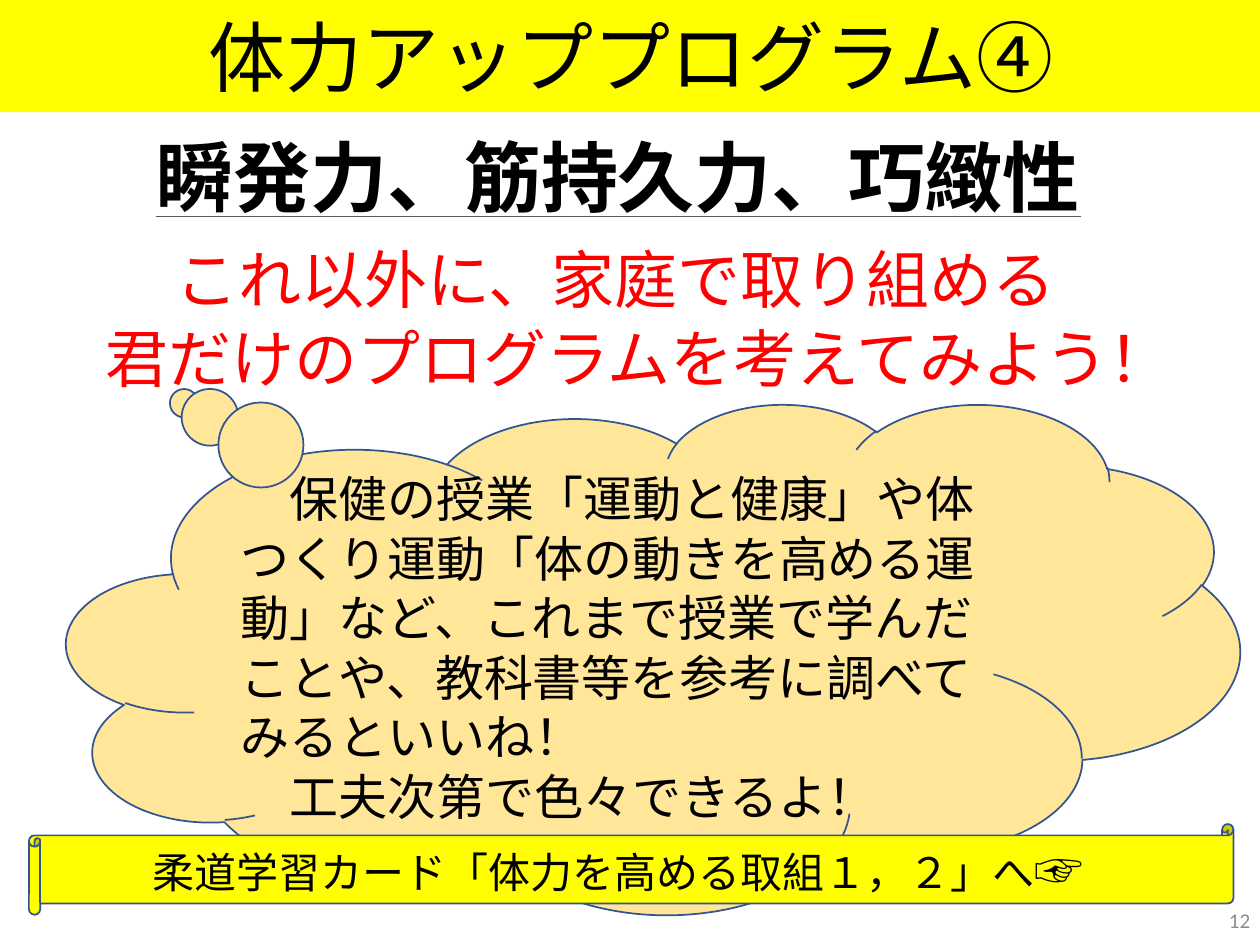
"""Build the fitness programme slide with its thought cloud and scroll banner."""
from dataclasses import dataclass

from pptx import Presentation
from pptx.dml.color import RGBColor
from pptx.enum.shapes import MSO_SHAPE as Preset
from pptx.enum.text import MSO_ANCHOR as Anchor, PP_ALIGN as Align
from pptx.oxml.ns import qn
from pptx.util import Inches, Pt


@dataclass(frozen=True)
class Theme:
    japanese: str = "Noto Sans CJK JP"
    latin: str = "Calibri"
    black: str = "000000"
    white: str = "FFFFFF"
    yellow: str = "FFFF00"
    cream: str = "FFE699"
    red: str = "FF0000"
    gray: str = "8C8C8C"
    outline: str = "325491"
    heading: int = 44
    indent: int = 40
    appeal: int = 36
    body: int = 28
    banner: int = 24
    spacer: int = 18
    number: int = 12


theme = Theme()


def add_panel(preset, place, fill, line=None):
    panel = page.shapes.add_shape(preset, *map(Inches, place))
    panel.shadow.inherit = False
    panel.fill.solid()
    panel.fill.fore_color.rgb = RGBColor.from_string(fill)
    if line:
        panel.line.color.rgb = RGBColor.from_string(line)
        panel.line.width = Pt(1)
    else:
        panel.line.fill.background()
    return panel


def write(box, paragraphs, color, align=Align.LEFT, spacing=None, bold=False):
    frame = box.text_frame
    frame.word_wrap = True
    frame.vertical_anchor = Anchor.MIDDLE
    for index, runs in enumerate(paragraphs):
        para = frame.add_paragraph() if index else frame.paragraphs[0]
        para.alignment = align
        if spacing:
            para.line_spacing = Pt(spacing)
        for text, size, face in runs:
            span = para.add_run()
            span.text = text
            span.font.size = Pt(size)
            span.font.name = face
            span.font.bold = bold
            span.font.underline = bold
            span.font.color.rgb = RGBColor.from_string(color)
            east_asian = span.font._element.makeelement(qn("a:ea"), {"typeface": face})
            span.font._element.append(east_asian)


deck = Presentation()
deck.slide_width, deck.slide_height = Inches(10), Inches(7.5)
page = deck.slides.add_slide(deck.slide_layouts[6])

title = add_panel(Preset.RECTANGLE, (0, 0, 10.02, 0.89), theme.yellow)
write(title, [[("体力アッププログラム④", theme.heading, theme.japanese)]],
      theme.black, Align.CENTER)

abilities = add_panel(Preset.RECTANGLE, (1.14, 0.96, 8.69, 0.87), theme.white)
write(abilities, [[("瞬発力、筋持久力、巧緻性", theme.heading, theme.japanese)]],
      theme.black, bold=True)

number = page.shapes.add_textbox(Inches(7.77), Inches(7.1), Inches(2.25), Inches(0.4))
write(number, [[("12", theme.number, theme.latin)]], theme.gray, Align.RIGHT)

appeal = add_panel(Preset.RECTANGLE, (0.74, 1.72, 9.09, 1.6), theme.white)
write(appeal, [
    [("　", theme.indent, theme.japanese),
     ("これ以外に、家庭で取り組める", theme.appeal, theme.japanese)],
    [("君だけのプログラムを考えてみよう！", theme.appeal, theme.japanese)],
], theme.red, spacing=44.5)

cloud = add_panel(Preset.CLOUD_CALLOUT, (0.53, 3.2, 9.31, 4.05), theme.cream, theme.outline)
cloud.adjustments[0], cloud.adjustments[1] = -0.4, -0.5
advice = ("　保健の授業「運動と健康」や体つくり運動「体の動きを高める運動」など、"
          "これまで授業で学んだことや、教科書等を参考に調べてみるといいね！")
write(cloud, [[(text, theme.body, theme.japanese)]
              for text in (advice, "　工夫次第で色々できるよ！")],
      theme.black, spacing=34)

banner = add_panel(Preset.HORIZONTAL_SCROLL, (0.23, 6.54, 9.56, 0.72), theme.yellow, theme.outline)
write(banner, [[
    ("柔道学習カード「体力を高める取組１，２」へ", theme.banner, theme.japanese),
    ("☞", theme.body, theme.japanese),
    ("　", theme.spacer, theme.latin),
]], theme.black, Align.CENTER)

deck.save("out.pptx")
